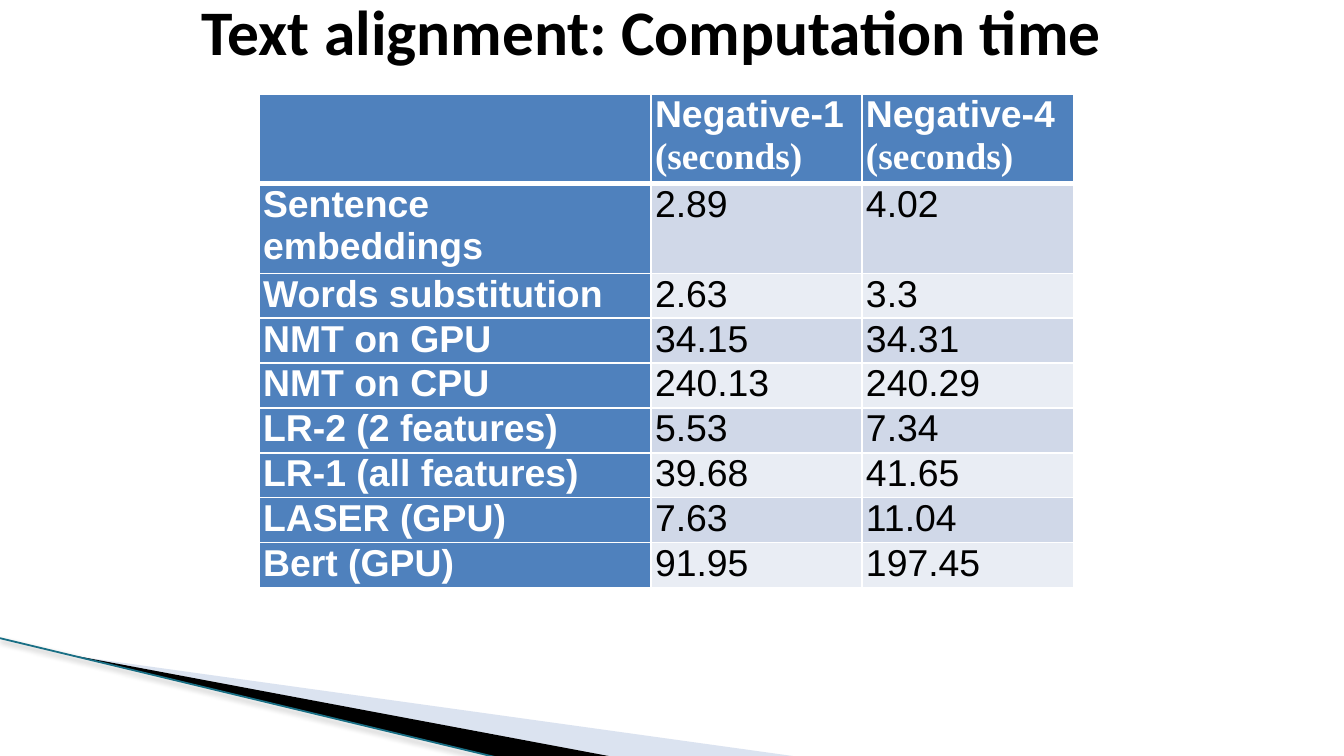
import dataclasses

import lxml.etree
import pptx
import pptx.dml.color
import pptx.enum.shapes
import pptx.enum.text
import pptx.oxml
import pptx.oxml.ns
import pptx.util

EMU_PER_PX = 914400 / 134.4
BLUE, PALE, LIGHT = "4F81BD", "D0D8E8", "E9EDF4"
WHITE, BLACK = "FFFFFF", "000000"


@dataclasses.dataclass
class Wedge:
    points: list[tuple[int, int]]
    color: str
    alpha: int = 100


@dataclasses.dataclass
class Timing:
    method: str
    negative_1: str
    negative_4: str


WEDGES = [
    Wedge([(74, 656), (800, 757), (613, 757)], "A7B9DB", 40),
    Wedge([(71, 655), (614, 757), (500, 758), (73, 656)], BLACK),
]
HEADERS = ["", "Negative-1\n(seconds)", "Negative-4\n(seconds)"]
TIMINGS = [
    Timing("Sentence embeddings", "2.89", "4.02"),
    Timing("Words substitution", "2.63", "3.3"),
    Timing("NMT on GPU", "34.15", "34.31"),
    Timing("NMT on CPU", "240.13", "240.29"),
    Timing("LR-2 (2 features)", "5.53", "7.34"),
    Timing("LR-1 (all features)", "39.68", "41.65"),
    Timing("LASER (GPU)", "7.63", "11.04"),
    Timing("Bert (GPU)", "91.95", "197.45"),
]
COLUMN_WIDTHS = [392, 211, 212]
ROW_HEIGHTS = [80, 80] + [40] * 7
TABLE_HEIGHT = 493


def px(value: int) -> pptx.util.Emu:
    return pptx.util.Emu(round(value * EMU_PER_PX))


def rgb(color: str) -> pptx.dml.color.RGBColor:
    return pptx.dml.color.RGBColor.from_string(color)


def add_child(parent, tag: str, **attributes: str):
    element = lxml.etree.SubElement(parent, pptx.oxml.ns.qn(tag))
    for name, value in attributes.items():
        element.set(name, value)
    return element


def format_runs(paragraph, font_name: str, size: int, color: str, bold: bool) -> None:
    for run in paragraph.runs:
        run.font.name = font_name
        run.font.size = pptx.util.Pt(size)
        run.font.bold = bold
        run.font.color.rgb = rgb(color)


def draw_wedge(slide, wedge: Wedge) -> None:
    start, *others = wedge.points
    builder = slide.shapes.build_freeform(*start, scale=EMU_PER_PX)
    builder.add_line_segments(others, close=True)
    shape = builder.convert_to_shape()
    shape.shadow.inherit = False
    shape.line.fill.background()
    shape.fill.solid()
    shape.fill.fore_color.rgb = rgb(wedge.color)
    if wedge.alpha < 100:
        color = shape._element.spPr.find(".//" + pptx.oxml.ns.qn("a:srgbClr"))
        add_child(color, "a:alpha", val=str(wedge.alpha * 1000))


def draw_edge_line(slide) -> None:
    line = slide.shapes.add_connector(
        pptx.enum.shapes.MSO_CONNECTOR.STRAIGHT, px(-1), px(638), px(499), px(758)
    )
    line.line.color.rgb = rgb("196F85")
    line.line.width = pptx.util.Pt(0.96)
    effects = add_child(line._element.spPr, "a:effectLst")
    shadow = add_child(
        effects, "a:outerShdw", blurRad="39370", dist="20320", dir="5400000", rotWithShape="0"
    )
    color = add_child(shadow, "a:srgbClr", val=BLACK)
    add_child(color, "a:alpha", val="38000")


def draw_title(slide, text: str) -> None:
    box = slide.shapes.add_textbox(px(164), px(3), px(975), px(55))
    frame = box.text_frame
    frame.word_wrap = True
    frame.vertical_anchor = pptx.enum.text.MSO_ANCHOR.MIDDLE
    frame.text = text
    paragraph = frame.paragraphs[0]
    paragraph.alignment = pptx.enum.text.PP_ALIGN.CENTER
    format_runs(paragraph, "Calibri", 34, BLACK, True)


def add_borders(cell, bottom: int) -> None:
    properties = cell._tc.get_or_add_tcPr()
    for side, points in [("L", 1), ("R", 1), ("T", 1), ("B", bottom)]:
        border = add_child(properties, f"a:ln{side}", w=str(pptx.util.Pt(points)))
        add_child(add_child(border, "a:solidFill"), "a:srgbClr", val=WHITE)


def draw_cell(cell, text: str, fill: str, heading: bool, bottom: int) -> None:
    cell.margin_left = cell.margin_right = cell.margin_top = cell.margin_bottom = 0
    add_borders(cell, bottom)
    cell.fill.solid()
    cell.fill.fore_color.rgb = rgb(fill)
    cell.text_frame.text = text
    for paragraph in cell.text_frame.paragraphs:
        properties = paragraph._p.get_or_add_pPr()
        properties.set("marL", str(px(4)))
        properties.set("indent", "0")
        font_name = "Times New Roman" if paragraph.text == "(seconds)" else "Arial"
        format_runs(paragraph, font_name, 20, WHITE if heading else BLACK, heading)


def draw_table(slide) -> None:
    rows = [HEADERS] + [list(dataclasses.astuple(timing)) for timing in TIMINGS]
    frame = slide.shapes.add_table(
        len(rows), len(HEADERS), px(259), px(94), px(sum(COLUMN_WIDTHS)), px(TABLE_HEIGHT)
    )
    table = frame.table
    for column, width in zip(table.columns, COLUMN_WIDTHS):
        column.width = px(width)
    for row, height in zip(table.rows, ROW_HEIGHTS):
        row.height = px(height)
    frame.height = px(TABLE_HEIGHT)
    for row_index, texts in enumerate(rows):
        band = PALE if row_index % 2 else LIGHT
        for column_index, text in enumerate(texts):
            heading = row_index == 0 or column_index == 0
            draw_cell(
                table.cell(row_index, column_index),
                text,
                BLUE if heading else band,
                heading,
                3 if row_index == 0 else 1,
            )


def main() -> None:
    presentation = pptx.Presentation()
    presentation.slide_width = px(1344)
    presentation.slide_height = px(756)
    slide = presentation.slides.add_slide(presentation.slide_layouts[6])
    for wedge in WEDGES:
        draw_wedge(slide, wedge)
    draw_edge_line(slide)
    draw_title(slide, "Text alignment: Computation time")
    draw_table(slide)
    presentation.save("out.pptx")


if __name__ == "__main__":
    main()
